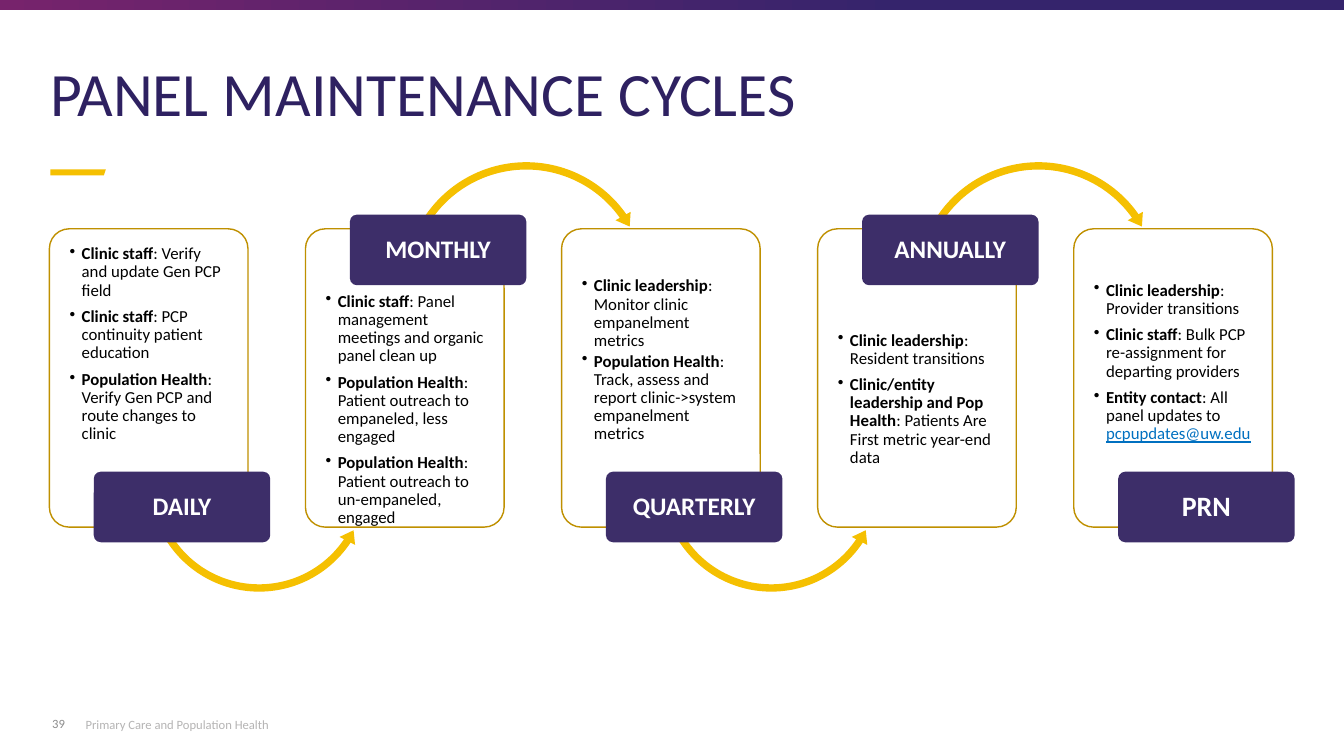
from pptx import Presentation
from pptx.dml.color import RGBColor
from pptx.enum.shapes import MSO_SHAPE
from pptx.enum.text import MSO_ANCHOR, PP_ALIGN
from pptx.oxml.ns import qn
from pptx.util import Inches, Pt
from lxml.etree import SubElement

GOLD, PURPLE, BLACK = "F5C001", "3D2E69", "000000"


def color(hex_text):
    return RGBColor.from_string(hex_text)


def add_run(paragraph, text, size, hex_text, bold=False):
    run = paragraph.add_run()
    run.text = text
    run.font.name = "Calibri"
    run.font.size = Pt(size)
    run.font.bold = bold
    run.font.color.rgb = color(hex_text)
    return run


presentation = Presentation()
presentation.slide_width = Inches(13.33)
presentation.slide_height = Inches(7.5)
slide = presentation.slides.add_slide(presentation.slide_layouts[6])
shapes = slide.shapes

band = shapes.add_shape(MSO_SHAPE.RECTANGLE, Inches(-0.03), 0, Inches(13.4), Inches(0.1))
band.rotation = 180
band.shadow.inherit = False
band.line.fill.background()
band.fill.gradient()
band.fill.gradient_angle = 0
for stop, (position, hex_text) in zip(band.fill.gradient_stops, [(0.33, "35246C"), (1, "77236C")]):
    stop.position = position
    stop.color.rgb = color(hex_text)

builder = shapes.build_freeform(Inches(0.5), Inches(1.68))
builder.add_line_segments(
    [(Inches(x), Inches(y)) for x, y in [(1.05, 1.68), (1.03, 1.74), (0.5, 1.74)]], close=True)
accent = builder.convert_to_shape()
accent.shadow.inherit = False
accent.fill.solid()
accent.fill.fore_color.rgb = color(GOLD)
accent.line.fill.background()

headings = [
    ("PANEL MAINTENANCE CYCLES", (0.4, 0.58, 12.48, 0.95), 44, "2E2161", MSO_ANCHOR.TOP),
    ("39", (0.42, 6.98, 0.46, 0.4), 9, "8C8C8C", MSO_ANCHOR.MIDDLE),
    ("Primary Care and Population Health", (0.75, 7.06, 2.64, 0.3), 9, "B5B4B4", MSO_ANCHOR.TOP),
]
for text, place, size, hex_text, anchor in headings:
    frame = shapes.add_textbox(*[Inches(value) for value in place]).text_frame
    frame.word_wrap = True
    frame.vertical_anchor = anchor
    paragraph = frame.paragraphs[0]
    paragraph.line_spacing = 0.9 if size == 44 else 1.0
    add_run(paragraph, text, size, hex_text)

cycles = [
    ("DAILY", 18, 6, [
        ("Clinic staff", ": Verify and update Gen PCP field"),
        ("Clinic staff", ": PCP continuity patient education"),
        ("Population Health", ": Verify Gen PCP and route changes to clinic")]),
    ("MONTHLY", 18, 6, [
        ("Clinic staff", ": Panel management meetings and organic panel clean up"),
        ("Population Health", ": Patient outreach to empaneled, less engaged"),
        ("Population Health", ": Patient outreach to un-empaneled, engaged")]),
    ("QUARTERLY", 18, 2, [
        ("Clinic leadership", ": Monitor clinic empanelment metrics"),
        ("Population Health", ": Track, assess and report clinic->system empanelment metrics")]),
    ("ANNUALLY", 18, 6, [
        ("Clinic leadership", ": Resident transitions"),
        ("Clinic/entity leadership and Pop Health", ": Patients Are First metric year-end data")]),
    ("PRN", 20, 6, [
        ("Clinic leadership", ": Provider transitions"),
        ("Clinic staff", ": Bulk PCP re-assignment for departing providers"),
        ("Entity contact", ": All panel updates to ", "pcpupdates@uw.edu")]),
]

for index, (label, label_size, gap, duties) in enumerate(cycles):
    left = 0.49 + 2.54 * index
    tab_on_top = index % 2 == 1

    card = shapes.add_shape(
        MSO_SHAPE.ROUNDED_RECTANGLE, Inches(left), Inches(2.27), Inches(1.97), Inches(2.96))
    card.adjustments[0] = 0.1
    card.shadow.inherit = False
    card.line.color.rgb = color("BF9000")
    card.line.width = Pt(1)
    if index < 3:
        card.fill.solid()
        card.fill.fore_color.rgb = color("FFFFFF")
        white = card.fill._xPr.find(qn("a:solidFill"))[0]
        SubElement(white, qn("a:alpha"), val="90000")
    else:
        card.fill.background()

    body = shapes.add_textbox(
        Inches(left + 0.06), Inches(2.96 if tab_on_top else 2.33), Inches(1.85), Inches(2.21))
    frame = body.text_frame
    frame.word_wrap = True
    frame.vertical_anchor = MSO_ANCHOR.MIDDLE if tab_on_top else MSO_ANCHOR.BOTTOM
    frame.margin_left = frame.margin_right = frame.margin_top = Inches(0.14)
    frame.margin_bottom = Inches(0.35 if label == "ANNUALLY" else 0.14)
    for number, (role, duty, *address) in enumerate(duties):
        paragraph = frame.add_paragraph() if number else frame.paragraphs[0]
        properties = paragraph._p.get_or_add_pPr()
        properties.set("marL", str(Inches(0.12)))
        properties.set("indent", str(Inches(-0.12)))
        SubElement(properties, qn("a:buChar"), char="•")
        paragraph.line_spacing = 0.9
        paragraph.space_after = Pt(gap if number < len(duties) - 1 else 2)
        add_run(paragraph, role, 12, BLACK, bold=True)
        add_run(paragraph, duty, 12, BLACK)
        for text in address:
            add_run(paragraph, text, 12, "0070C0").font.underline = True

    if index < len(cycles) - 1:
        if tab_on_top:
            kind, offset, top, size, angle = MSO_SHAPE.CIRCULAR_ARROW, 0.93, 1.56, 2.52, 347.8
            adjustments = [0.029, 3.591, 202.225, 133.326, 0.034]
        else:
            kind, offset, top, size, angle = MSO_SHAPE.LEFT_CIRCULAR_ARROW, 0.94, 3.64, 2.28, 12
            adjustments = [0.032, 4.001, 13.104, 81.593, 0.038]
        arrow = shapes.add_shape(
            kind, Inches(left + offset), Inches(top), Inches(size), Inches(size))
        for number, value in enumerate(adjustments):
            arrow.adjustments[number] = value
        arrow.rotation = angle
        arrow.shadow.inherit = False
        arrow.fill.solid()
        arrow.fill.fore_color.rgb = color(GOLD)
        arrow.line.fill.background()

    tab = shapes.add_shape(
        MSO_SHAPE.ROUNDED_RECTANGLE, Inches(left + 0.44),
        Inches(2.13 if tab_on_top else 4.68), Inches(1.75), Inches(0.7))
    tab.adjustments[0] = 0.1
    tab.shadow.inherit = False
    tab.fill.solid()
    tab.fill.fore_color.rgb = color(PURPLE)
    tab.line.fill.background()
    frame = tab.text_frame
    frame.word_wrap = True
    frame.vertical_anchor = MSO_ANCHOR.MIDDLE
    frame.margin_left = frame.margin_right = Inches(0.04)
    frame.margin_top = frame.margin_bottom = Inches(0.03)
    paragraph = frame.paragraphs[0]
    paragraph.alignment = PP_ALIGN.CENTER
    paragraph.line_spacing = 0.9
    add_run(paragraph, label, label_size, "FFFFFF", bold=True)

presentation.save("out.pptx")
